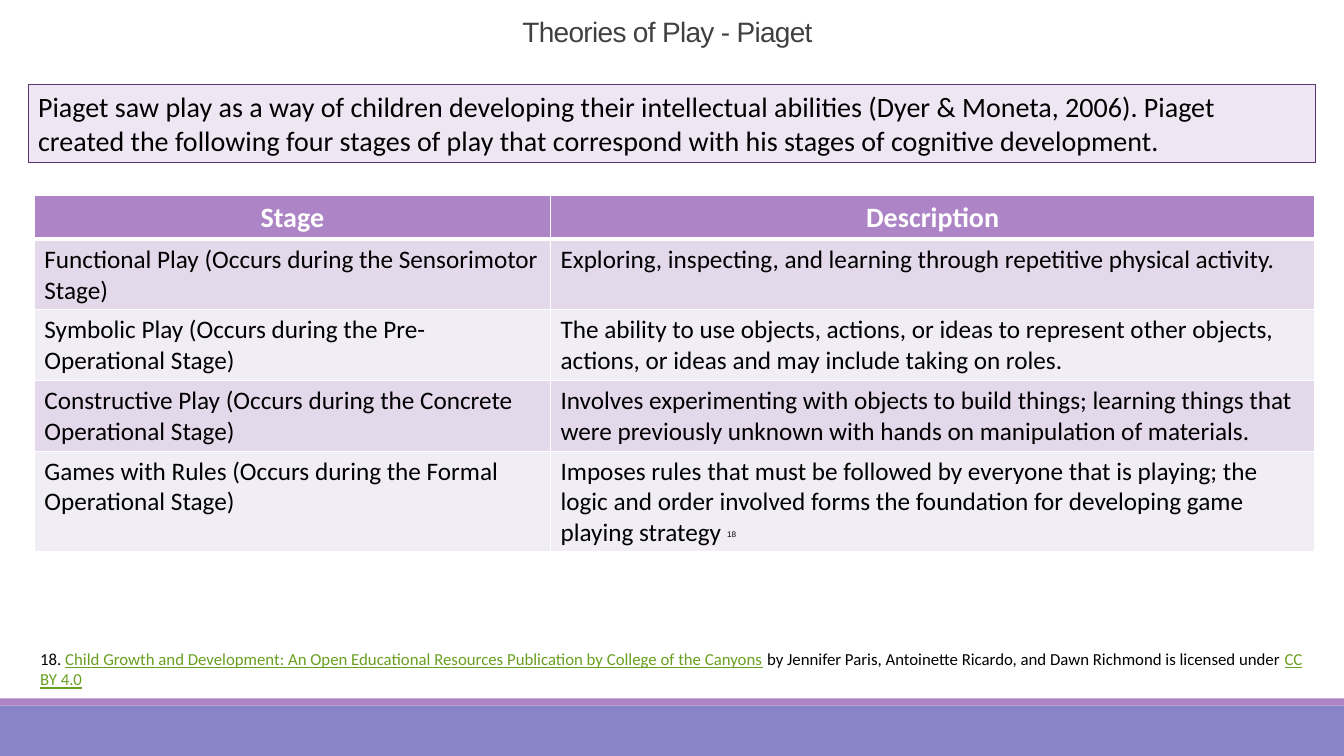
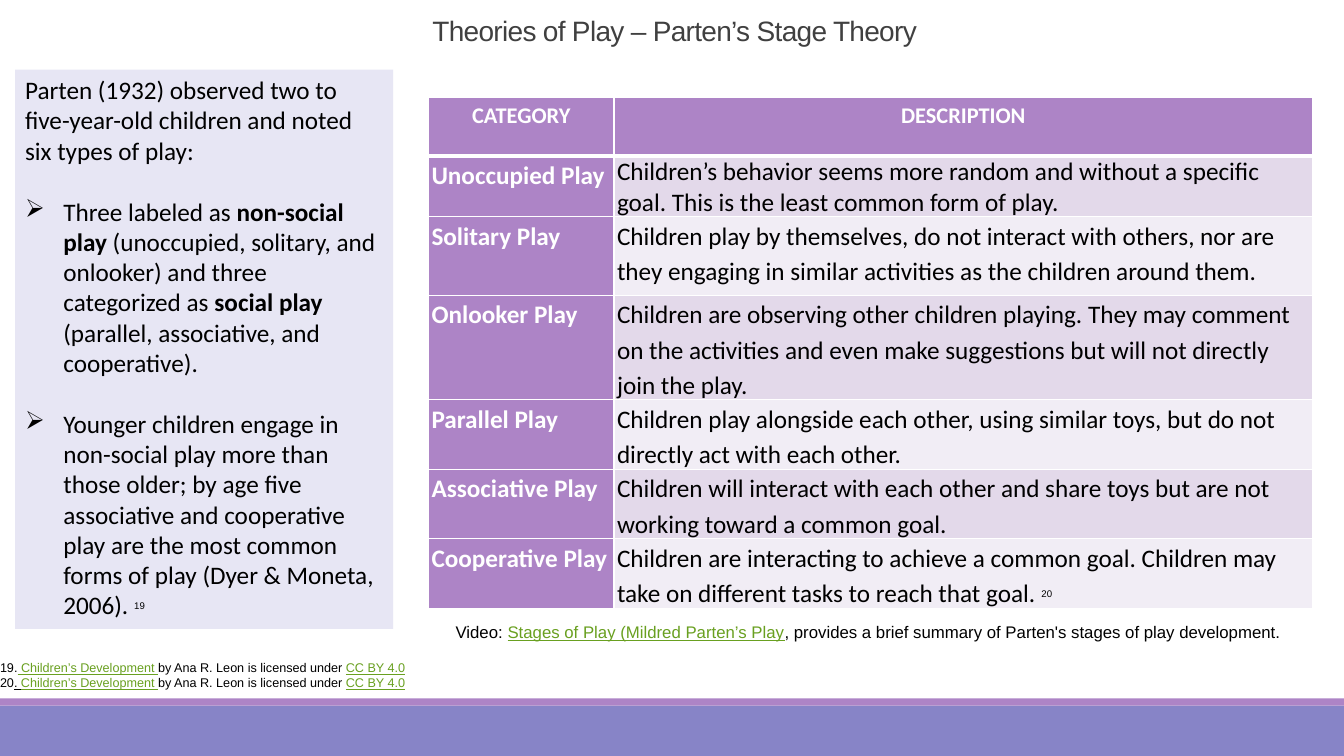
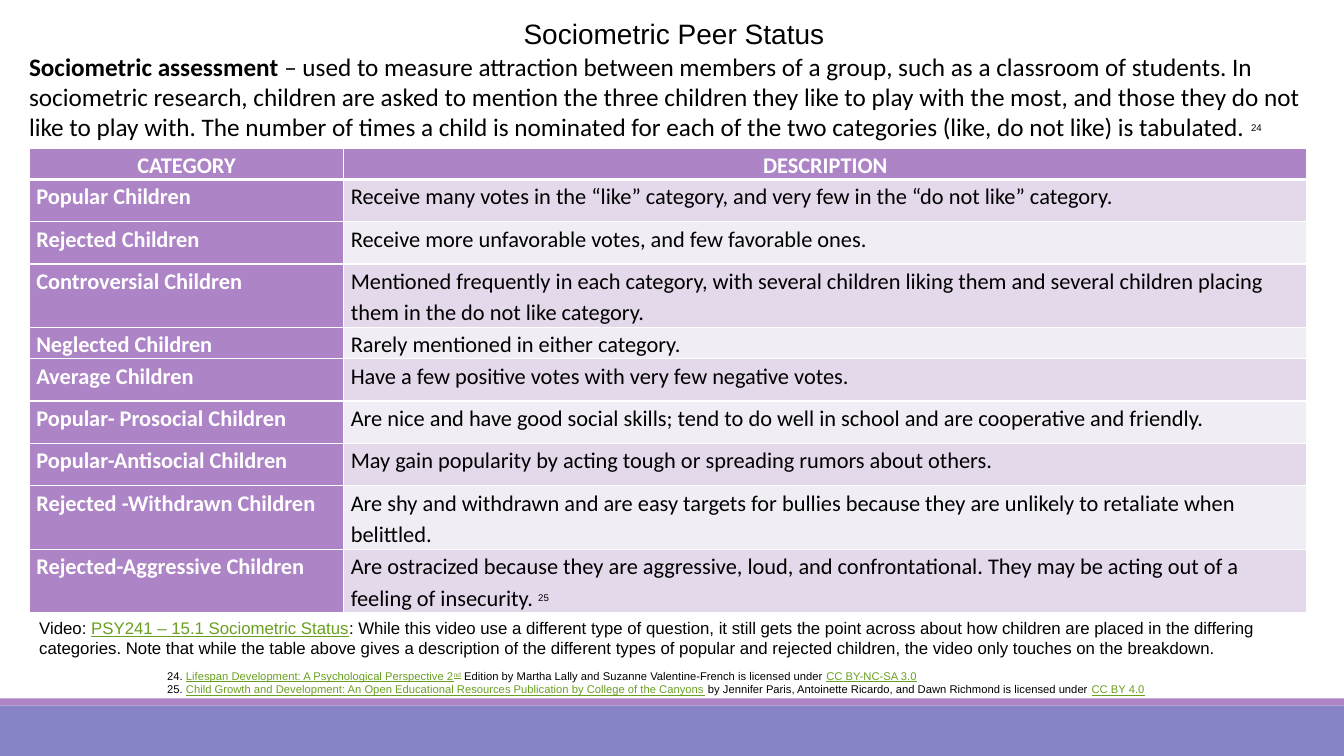
from lxml.etree import SubElement
from pptx import Presentation
from pptx.dml.color import RGBColor
from pptx.enum.shapes import MSO_SHAPE
from pptx.enum.text import MSO_ANCHOR, PP_ALIGN
from pptx.oxml.ns import qn
from pptx.util import Inches, Pt

COLORS = {
    "ink": "000000", "title": "404040", "white": "FFFFFF", "link": "69A020",
    "band": "8784C7", "purple": "AD84C6", "odd": "E3D9EA", "even": "F1EDF5",
    "lilac": "EFE6F4", "lavender": "E7E6F4", "edge": "5A3471",
}
COLORS = {name: RGBColor.from_string(value) for name, value in COLORS.items()}


def write(frame, paragraphs, size, font="Calibri", color="ink", bold=False,
          align=PP_ALIGN.LEFT, spacing=1.0, note_size=12, bullets_from=None, tracking=None):
    """Fill a text frame; a span is a string or a (text, style) pair."""
    for index, spans in enumerate(paragraphs):
        para = frame.paragraphs[0] if index == 0 else frame.add_paragraph()
        para.alignment = align
        para.line_spacing = spacing
        if bullets_from is not None and index >= bullets_from:
            para.space_before = Pt(22)
            properties = para._p.get_or_add_pPr()
            properties.set("marL", str(Inches(0.38)))
            properties.set("indent", str(-Inches(0.38)))
            SubElement(properties, qn("a:buChar")).set("char", "➢")
        para.font.name = font
        para.font.size = Pt(size)
        para.font.bold = bold
        para.font.color.rgb = COLORS[color]
        for span in [spans] if isinstance(spans, str) else spans:
            text, style = (span, "") if isinstance(span, str) else span
            run = para.add_run()
            run.text = text
            if "bold" in style:
                run.font.bold = True
            if "underline" in style or "link" in style:
                run.font.underline = True
            if "link" in style:
                run.font.color.rgb = COLORS["link"]
            if "note" in style:
                run.font.name = "Arial"
                run.font.size = Pt(note_size)
            if "note" in style or "super" in style:
                run._r.get_or_add_rPr().set("baseline", "30000")
            if tracking:
                run._r.get_or_add_rPr().set("spc", str(tracking))


def add_text(page, at, paragraphs, size, fill=None, line=None, inset=0.1,
             anchor=MSO_ANCHOR.TOP, **style):
    box = page.shapes.add_textbox(*[Inches(value) for value in at])
    frame = box.text_frame
    frame.word_wrap = True
    frame.vertical_anchor = anchor
    frame.margin_left = frame.margin_right = Inches(inset)
    if fill:
        box.fill.solid()
        box.fill.fore_color.rgb = COLORS[fill]
    if line:
        box.line.color.rgb = COLORS[line]
        box.line.width = Pt(0.75)
    write(frame, paragraphs, size, **style)


deck = Presentation()
deck.slide_width, deck.slide_height = Inches(13.33), Inches(7.5)

# Pages with the shared bottom bands and titles
theory_title = dict(color="title", spacing=0.85, tracking=-50, anchor=MSO_ANCHOR.BOTTOM)
titles = [
    ("Theories of Play - Piaget", (4.08, 0.09, 5.08, 0.44), theory_title),
    ("Theories of Play – Parten’s Stage Theory", (3.8, 0, 5.78, 0.52), theory_title),
    ("Sociometric Peer Status", (4.83, 0.11, 3.71, 0.44), {}),
]
pages = []
for title, at, style in titles:
    page = deck.slides.add_slide(deck.slide_layouts[6])
    for top, height, color in [(7, 0.5, "band"), (6.93, 0.07, "purple")]:
        band = page.shapes.add_shape(MSO_SHAPE.RECTANGLE, 0, Inches(top),
                                     deck.slide_width, Inches(height))
        band.shadow.inherit = False
        band.fill.solid()
        band.fill.fore_color.rgb = COLORS[color]
        band.line.fill.background()
    add_text(page, at, [title], 20, font="Arial", align=PP_ALIGN.CENTER, **style)
    pages.append(page)
piaget, parten, peers = pages

# Wording used in several credits
canyons = ("Child Growth and Development: An Open Educational Resources Publication "
           "by College of the Canyons", "link")
canyons_authors = (" by Jennifer Paris, Antoinette Ricardo, and Dawn Richmond "
                   "is licensed under ")
license_by = ("CC BY 4.0", "link")
leon = "by Ana R. Leon is licensed under "

# Piaget: introduction and credit
add_text(piaget, (0.28, 0.84, 12.77, 0.77), [
    "Piaget saw play as a way of children developing their intellectual abilities "
    "(Dyer & Moneta, 2006). Piaget created the following four stages of play that "
    "correspond with his stages of cognitive development."], 20, fill="lilac", line="edge")
add_text(piaget, (0.3, 6.39, 12.77, 0.5),
         [["18. ", canyons, canyons_authors, license_by]], 12)

# Parten: side panel, credits and video line
add_text(parten, (0.15, 0.69, 3.75, 5.55), [
    "Parten (1932) observed two to five-year-old children and noted six types of play:",
    ["Three labeled as ", ("non-social play ", "bold"),
     "(unoccupied, solitary, and onlooker) and three categorized as ",
     ("social play ", "bold"), "(parallel, associative, and cooperative)."],
    ["Younger children engage in non-social play more than those older; by age five "
     "associative and cooperative play are the most common forms of play "
     "(Dyer & Moneta, 2006). ", ("19", "note")],
], 18, fill="lavender", bullets_from=1)
add_text(parten, (0, 6.5, 4.25, 0.4), [
    ["19.", (" Children’s Development ", "link"), leon, license_by],
    ["20", (". ", "underline"), ("Children’s Development ", "link"), leon, license_by],
], 9, font="Arial", inset=0)
add_text(parten, (4.42, 6.12, 8.6, 0.3), [
    ["Video: ", ("Stages of Play (Mildred Parten’s Play", "link"),
     ", provides a brief summary of Parten's stages of play development."]],
    12, font="Arial")

# Peer status: definition, video line and credits
add_text(peers, (0.19, 0.46, 12.93, 1.01), [
    [("Sociometric assessment ", "bold"),
     "– used to measure attraction between members of a group, such as a classroom of "
     "students. In sociometric research, children are asked to mention the three children "
     "they like to play with the most, and those they do not like to play with. The number "
     "of times a child is nominated for each of the two categories (like, do not like) is "
     "tabulated. ", ("24", "note")]], 18)
add_text(peers, (0.29, 6.08, 12.51, 0.5), [
    ["Video: ", ("PSY241 – 15.1 Sociometric Status", "link"),
     ": While this video use a different type of question, it still gets the point across "
     "about how children are placed in the differing categories. Note that while the table "
     "above gives a description of the different types of popular and rejected children, "
     "the video only touches on the breakdown."]], 12, font="Arial")
add_text(peers, (1.56, 6.59, 10.25, 0.37), [
    ["24. ", ("Lifespan Development: A Psychological Perspective 2", "link"),
     ("nd", "link super"),
     " Edition by Martha Lally and Suzanne Valentine-French is licensed under ",
     ("CC BY-NC-SA 3.0", "link")],
    ["25. ", canyons, canyons_authors, license_by],
], 8, font="Arial")

# Table contents: row height, first cell, second cell
piaget_rows = [
    (0.43, "Stage", "Description"),
    (0.7, "Functional Play (Occurs during the Sensorimotor Stage)",
     "Exploring, inspecting, and learning through repetitive physical activity."),
    (0.7, "Symbolic Play (Occurs during the Pre-Operational Stage)",
     "The ability to use objects, actions, or ideas to represent other objects, actions, "
     "or ideas and may include taking on roles."),
    (0.7, "Constructive Play (Occurs during the Concrete Operational Stage)",
     "Involves experimenting with objects to build things; learning things that were "
     "previously unknown with hands on manipulation of materials."),
    (1.0, "Games with Rules (Occurs during the Formal Operational Stage)",
     ["Imposes rules that must be followed by everyone that is playing; the logic and order "
      "involved forms the foundation for developing game playing strategy ",
      ("18", "note")]),
]
parten_rows = [
    (0.58, "CATEGORY", "DESCRIPTION"),
    (0.6, "Unoccupied Play",
     "Children’s behavior seems more random and without a specific goal. This is the least "
     "common form of play."),
    (0.78, "Solitary Play",
     "Children play by themselves, do not interact with others, nor are they engaging in "
     "similar activities as the children around them."),
    (1.03, "Onlooker Play",
     "Children are observing other children playing. They may comment on the activities and "
     "even make suggestions but will not directly join the play."),
    (0.69, "Parallel Play",
     "Children play alongside each other, using similar toys, but do not directly act with "
     "each other."),
    (0.69, "Associative Play",
     "Children will interact with each other and share toys but are not working toward a "
     "common goal."),
    (0.69, "Cooperative Play",
     ["Children are interacting to achieve a common goal. Children may take on different "
      "tasks to reach that goal. ", ("20", "note")]),
]
peer_rows = [
    (0.31, "CATEGORY", "DESCRIPTION"),
    (0.42, "Popular Children",
     "Receive many votes in the “like” category, and very few in the “do not like” category."),
    (0.42, "Rejected Children", "Receive more unfavorable votes, and few favorable ones."),
    (0.63, "Controversial Children",
     "Mentioned frequently in each category, with several children liking them and several "
     "children placing them in the do not like category."),
    (0.31, "Neglected Children", "Rarely mentioned in either category."),
    (0.42, "Average Children", "Have a few positive votes with very few negative votes."),
    (0.42, "Popular- Prosocial Children",
     "Are nice and have good social skills; tend to do well in school and are cooperative "
     "and friendly."),
    (0.42, "Popular-Antisocial Children",
     "May gain popularity by acting tough or spreading rumors about others."),
    (0.63, "Rejected -Withdrawn Children",
     "Are shy and withdrawn and are easy targets for bullies because they are unlikely to "
     "retaliate when belittled."),
    (0.63, "Rejected-Aggressive Children",
     ["Are ostracized because they are aggressive, loud, and confrontational. They may be "
      "acting out of a feeling of insecurity. ", ("25", "note")]),
]

# Tables: page, left, top, column widths, insets, header and body size, spacing,
# note size, whether the first column is dark, rows with single spacing, contents
tables = [
    (piaget, 0.34, 1.94, (5.12, 7.58), (0.1, 0.05), 20, 18, 1.0, 10, False, (), piaget_rows),
    (parten, 4.25, 0.97, (1.84, 6.93), (0.03, 0), 16, 18, 1.15, 12, True, (1,), parten_rows),
    (peers, 0.29, 1.47, (3.12, 9.55), (0.07, 0), 16, 16, 1.15, 12, True, (), peer_rows),
]
for (page, left, top, widths, insets, header_size, body_size, spacing, note_size,
     dark_column, single_rows, rows) in tables:
    height = sum(row[0] for row in rows)
    table = page.shapes.add_table(len(rows), 2, Inches(left), Inches(top),
                                  Inches(sum(widths)), Inches(height)).table
    for column, width in zip(table.columns, widths):
        column.width = Inches(width)
    for row_index, (row_height, *contents) in enumerate(rows):
        table.rows[row_index].height = Inches(row_height)
        header = row_index == 0
        for column_index, content in enumerate(contents):
            cell = table.cell(row_index, column_index)
            cell.margin_left = cell.margin_right = Inches(insets[0])
            cell.margin_top = cell.margin_bottom = Inches(insets[1])
            # White rules, thicker under the header
            for side in "LRTB":
                thick = (row_index, side) in [(0, "B"), (1, "T")]
                rule = SubElement(cell._tc.get_or_add_tcPr(), qn(f"a:ln{side}"))
                rule.set("w", str(Pt(3 if thick else 1)))
                paint = SubElement(rule, qn("a:solidFill"))
                SubElement(paint, qn("a:srgbClr")).set("val", str(COLORS["white"]))
            dark = header or (dark_column and column_index == 0)
            stripe = "odd" if row_index % 2 else "even"
            cell.fill.solid()
            cell.fill.fore_color.rgb = COLORS["purple" if dark else stripe]
            single = row_index in single_rows and column_index == 1
            write(cell.text_frame, [content], header_size if header else body_size,
                  color="white" if dark else "ink", bold=dark,
                  align=PP_ALIGN.CENTER if header else PP_ALIGN.LEFT,
                  spacing=1.0 if single else spacing, note_size=note_size)

deck.save("out.pptx")
